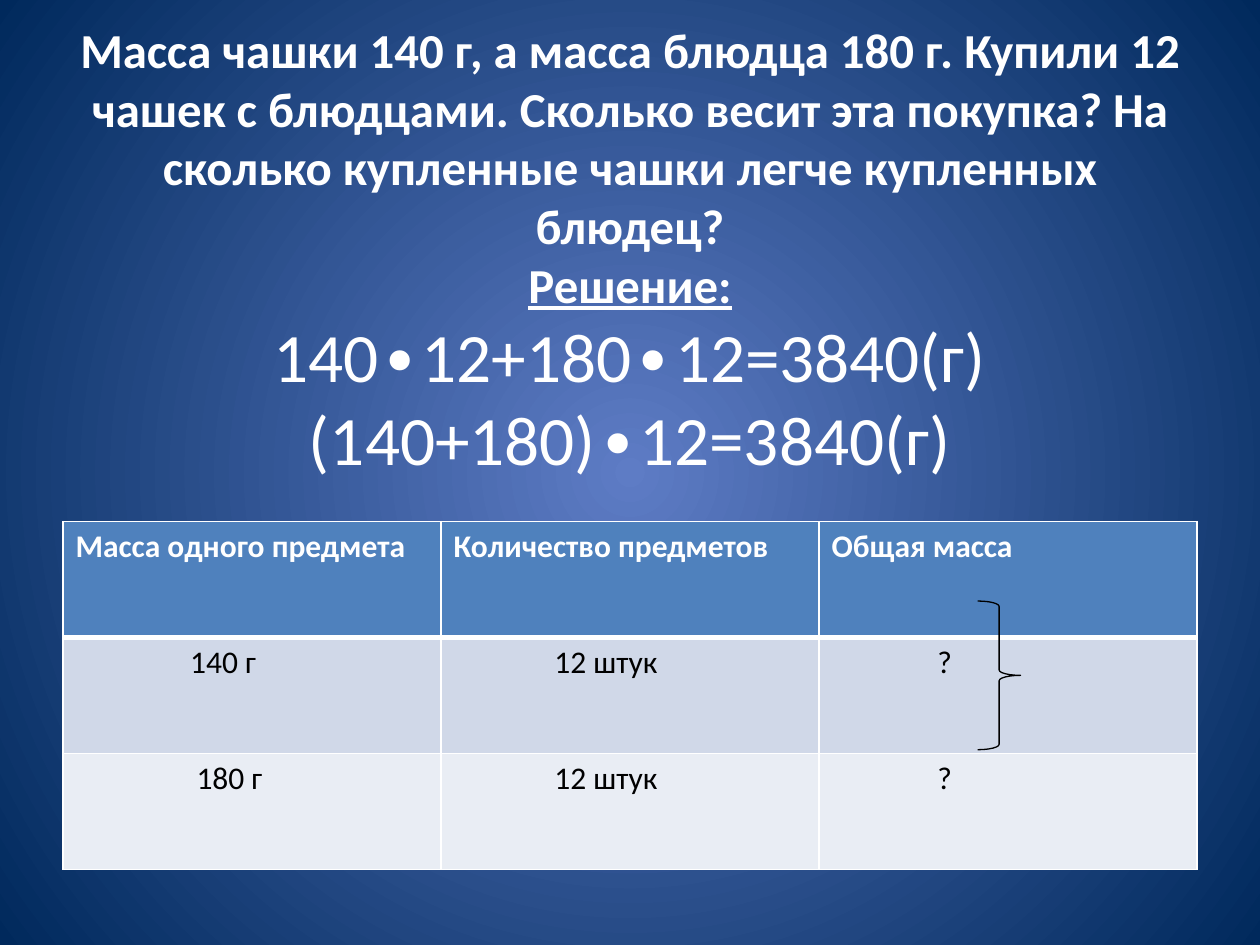
from lxml.etree import SubElement
from pptx import Presentation
from pptx.dml.color import RGBColor
from pptx.enum.shapes import MSO_SHAPE
from pptx.enum.text import MSO_ANCHOR, MSO_AUTO_SIZE, PP_ALIGN
from pptx.oxml import parse_xml
from pptx.oxml.ns import nsdecls, qn
from pptx.util import Inches, Pt

WHITE = RGBColor(0xFF, 0xFF, 0xFF)
BLACK = RGBColor(0, 0, 0)
GLOW = RGBColor(0x5E, 0x7C, 0xC5)
NAVY = RGBColor(0x00, 0x29, 0x5C)
HEADER = RGBColor(0x4F, 0x81, 0xBD)
BANDS = [RGBColor(0xD0, 0xD8, 0xE8), RGBColor(0xE9, 0xED, 0xF4)]

PROBLEM = [
    ("Масса чашки 140 г, а масса блюдца 180 г. Купили 12 чашек с блюдцами. "
     "Сколько весит эта покупка? На сколько купленные чашки легче купленных блюдец?",
     dict(size=27.9, bold=True)),
    ("Решение:", dict(size=27.9, bold=True, underline=True)),
    ("140∙12+180∙12=3840(г)", dict(size=39.6)),
    ("(140+180)∙12=3840(г)", dict(size=39.6)),
]
HEADINGS = ["Масса одного предмета", "Количество предметов", "Общая масса"]
PURCHASES = [["140 г", "12 штук", "?"], ["180 г", "12 штук", "?"]]
INDENTS = [[0.91, 0.8, 0.84], [0.96, 0.8, 0.84]]


def write(paragraph, text, size=18, color=WHITE, bold=False, underline=False,
          align=PP_ALIGN.LEFT, font="Calibri"):
    paragraph.alignment = align
    run = paragraph.add_run()
    run.text = text
    run.font.name = font
    run.font.size = Pt(size)
    run.font.bold = bold
    run.font.underline = underline
    run.font.color.rgb = color


class Lesson:
    def __init__(self):
        self.deck = Presentation()
        self.deck.slide_width, self.deck.slide_height = Inches(10), Inches(7.5)
        self.slide = self.deck.slides.add_slide(self.deck.slide_layouts[5])

    def box(self, left, top, width, height):
        across, down = self.deck.slide_width, self.deck.slide_height
        return (int(left * across), int(top * down),
                int(width * across), int(height * down))

    def background(self, center, edge):
        fill = self.slide.background.fill
        fill.gradient()
        for stop, color in zip(fill.gradient_stops, (center, edge)):
            stop.color.rgb = color
        for position, stop in enumerate(fill.gradient_stops):
            stop.position = position
        gradient = self.slide.element.xpath(".//a:gradFill")[0]
        gradient.replace(gradient.find(qn("a:lin")), parse_xml(
            f'<a:path {nsdecls("a")} path="circle">'
            '<a:fillToRect l="50000" t="50000" r="50000" b="50000"/></a:path>'))

    def title(self, lines, *area):
        title = self.slide.shapes.title
        title.left, title.top, title.width, title.height = self.box(*area)
        frame = title.text_frame
        frame.auto_size = MSO_AUTO_SIZE.NONE
        frame.word_wrap = True
        frame.vertical_anchor = MSO_ANCHOR.MIDDLE
        frame.margin_bottom = Inches(0.61)
        for number, (text, style) in enumerate(lines):
            paragraph = frame.add_paragraph() if number else frame.paragraphs[0]
            write(paragraph, text, align=PP_ALIGN.CENTER, **style)

    def cell(self, cell, text, fill, indent=0, bottom=1, **style):
        cell.margin_left = Inches(0.1 + indent)
        write(cell.text_frame.paragraphs[0], text, **style)
        properties = cell._tc.get_or_add_tcPr()
        for side, width in dict(lnL=1, lnR=1, lnT=1, lnB=bottom).items():
            border = SubElement(properties, qn(f"a:{side}"), w=str(Pt(width)))
            SubElement(SubElement(border, qn("a:solidFill")),
                       qn("a:srgbClr"), val=str(WHITE))
        cell.fill.solid()
        cell.fill.fore_color.rgb = fill

    def table(self, headings, rows, indents, *area):
        table = self.slide.shapes.add_table(
            len(rows) + 1, len(headings), *self.box(*area)).table
        for column, heading in enumerate(headings):
            self.cell(table.cell(0, column), heading, HEADER, bottom=3, bold=True)
        for row, (values, shifts) in enumerate(zip(rows, indents)):
            for column, (value, shift) in enumerate(zip(values, shifts)):
                self.cell(table.cell(row + 1, column), value, BANDS[row % 2],
                          indent=shift, color=BLACK)

    def brace(self, *area):
        brace = self.slide.shapes.add_shape(MSO_SHAPE.RIGHT_BRACE, *self.box(*area))
        brace.adjustments[0] = 0.125
        brace.shadow.inherit = False
        brace.fill.background()
        brace.line.color.rgb = BLACK
        brace.line.width = Pt(0.75)


def main():
    lesson = Lesson()
    lesson.background(GLOW, NAVY)
    lesson.title(PROBLEM, 0.05, 0.92 / 7.5, 0.9, 2.68 / 7.5)
    lesson.table(HEADINGS, PURCHASES, INDENTS, 0.05, 4.14 / 7.5, 0.9, 2.76 / 7.5)
    lesson.brace(0.776, 4.77 / 7.5, 0.034, 1.18 / 7.5)
    lesson.deck.save("out.pptx")


if __name__ == "__main__":
    main()
